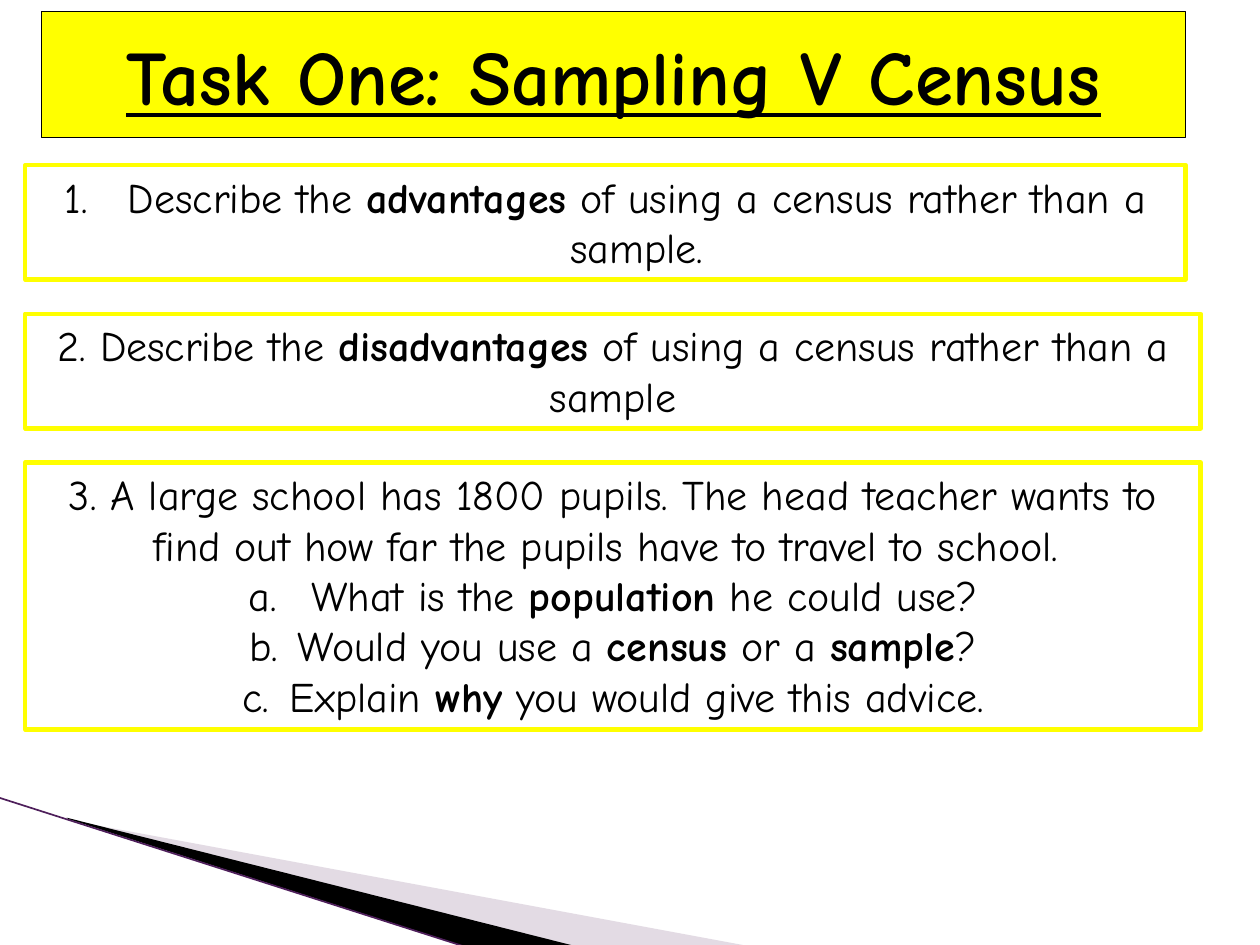
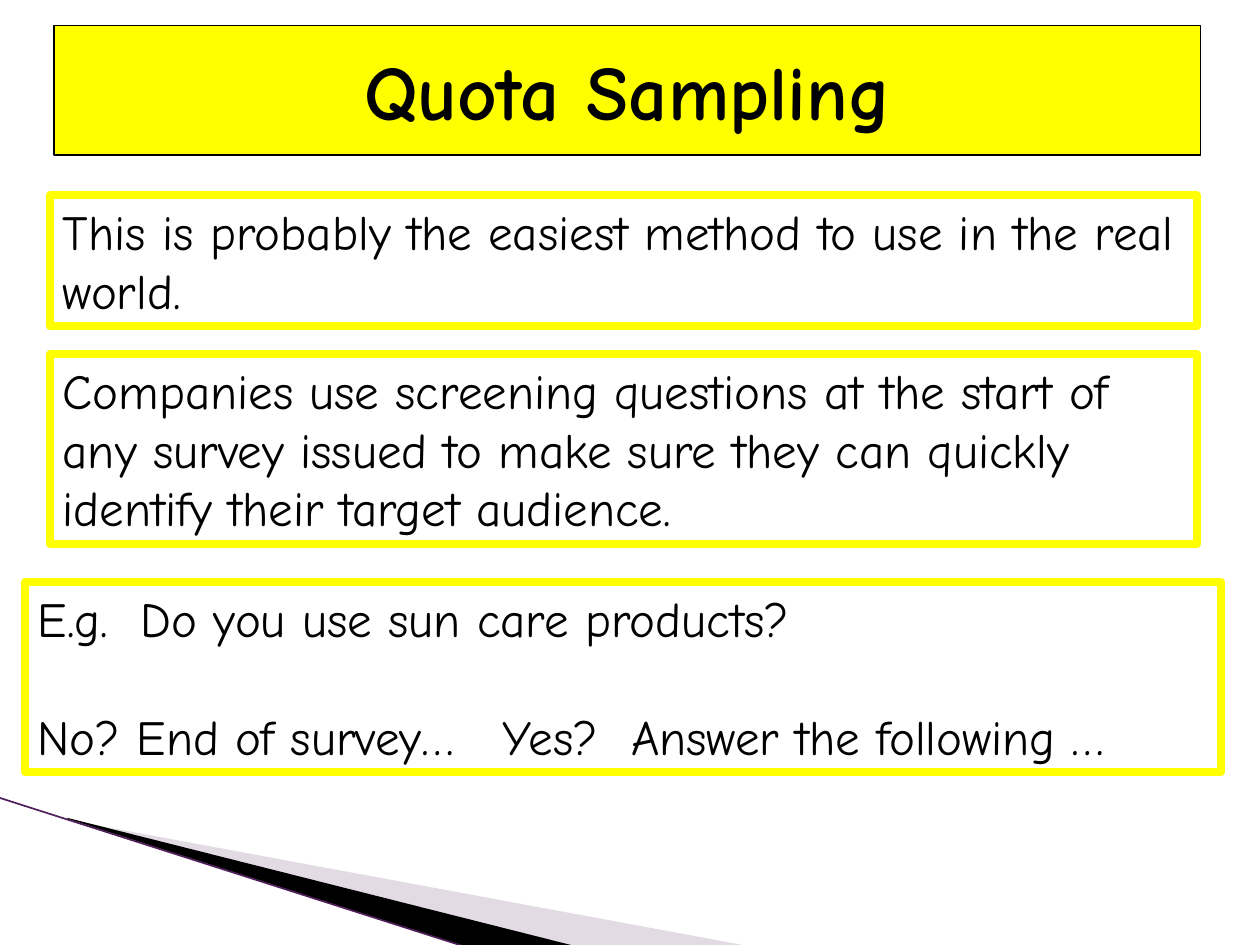
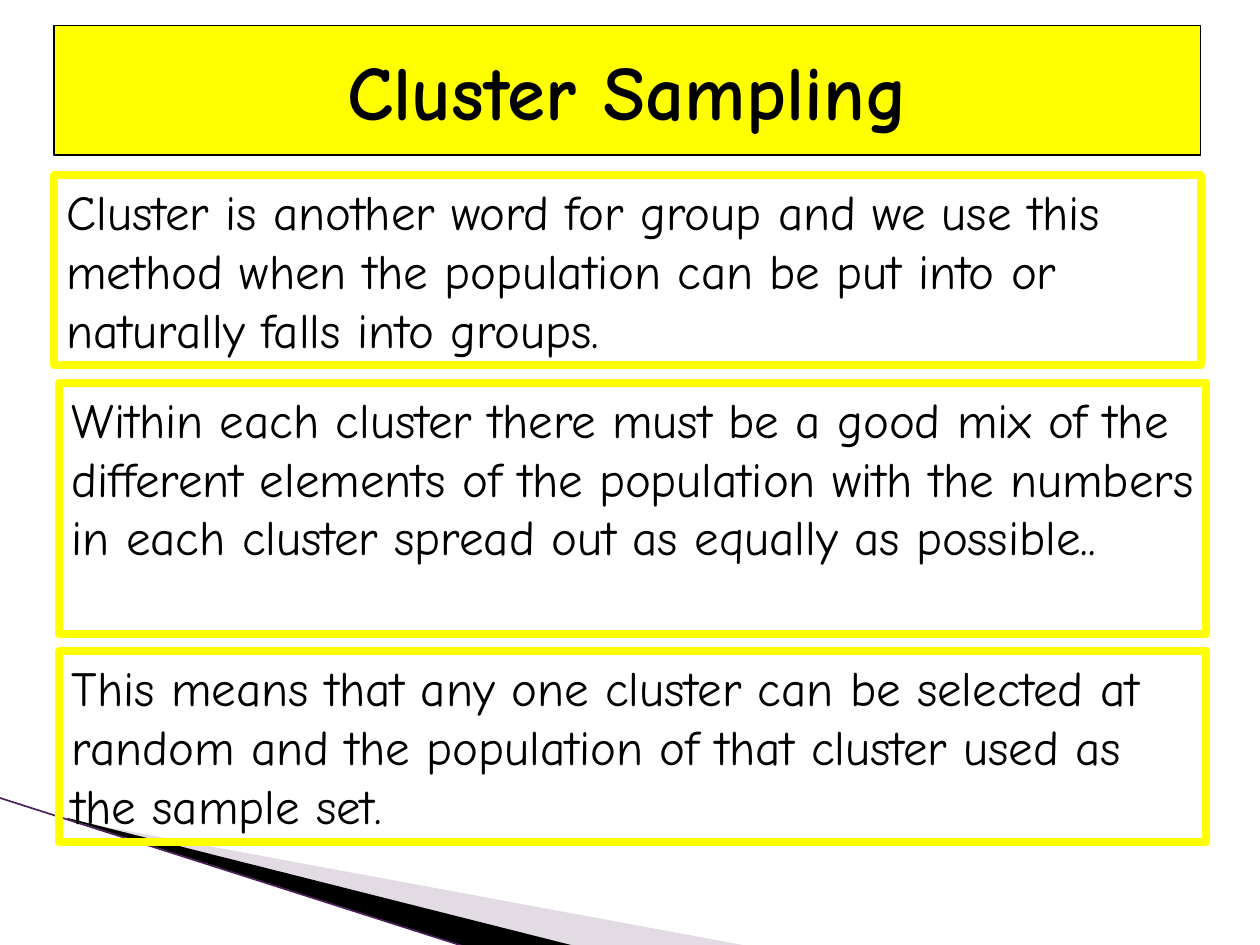
from dataclasses import dataclass

import pptx
import pptx.dml.color
import pptx.enum.shapes
import pptx.enum.text
import pptx.util
from lxml import etree
from pptx.oxml.ns import qn


@dataclass(frozen=True)
class Theme:
    font: str = "Comic Neue"
    ink: str = "000000"
    highlight: str = "FFFF00"
    mist: str = "B9A5BC"
    edge: str = "4E1F5B"
    title_size: float = 44
    task_size: float = 24
    note_size: float = 28
    title_border: float = 0.75
    task_border: float = 2.5
    note_border: float = 4.5
    edge_width: float = 0.95
    skipped_line: float = 34


theme = Theme()
Align = pptx.enum.text.PP_ALIGN
Anchor = pptx.enum.text.MSO_ANCHOR
rgb = pptx.dml.color.RGBColor.from_string

deck = pptx.Presentation()
deck.slide_width = pptx.util.Inches(10)
deck.slide_height = pptx.util.Inches(7.5)
cell = deck.slide_width // 1000


def write(paragraph, text, size, align=Align.LEFT, bold=False, underline=None,
          number=None, indent=0, tabs=(), before=0):
    paragraph.alignment = align
    properties = paragraph._p.get_or_add_pPr()
    if before:
        paragraph.space_before = pptx.util.Pt(before)
    if number:
        properties.set("marL", str(indent * cell))
        properties.set("indent", str(-indent * cell))
        etree.SubElement(properties, qn("a:buFont"), typeface="+mj-lt")
        etree.SubElement(properties, qn("a:buAutoNum"), type=number)
    if tabs:
        stops = etree.SubElement(properties, qn("a:tabLst"))
        for stop in tabs:
            etree.SubElement(stops, qn("a:tab"), pos=str(stop * cell), algn="l")
    for position, words in enumerate(text.split("*")):
        run = paragraph.add_run()
        run.text = words
        run.font.name = theme.font
        run.font.size = pptx.util.Pt(size)
        run.font.color.rgb = rgb(theme.ink)
        run.font.bold = bold or position % 2 == 1
        run.font.underline = underline


def panel(slide, place, border, border_color, fill=None):
    shape = slide.shapes.add_shape(
        pptx.enum.shapes.MSO_SHAPE.RECTANGLE, *(length * cell for length in place))
    shape.shadow.inherit = False
    if fill:
        shape.fill.solid()
        shape.fill.fore_color.rgb = rgb(fill)
    else:
        shape.fill.background()
    shape.line.color.rgb = rgb(border_color)
    shape.line.width = pptx.util.Pt(border)
    frame = shape.text_frame
    frame.word_wrap = True
    frame.vertical_anchor = Anchor.MIDDLE if fill else Anchor.TOP
    if not fill:
        frame.auto_size = pptx.enum.text.MSO_AUTO_SIZE.SHAPE_TO_FIT_TEXT
    return frame


wedges = [
    (theme.mist, 40, [(55, 651), (595, 751), (456, 751), (55, 650)]),
    (theme.ink, 100, [(53, 649), (457, 751), (372, 752), (54, 650)]),
]

task_title = (33, 9, 908, 100)
method_title = (43, 20, 910, 103)
task_style = dict(size=theme.task_size, align=Align.CENTER)
note_style = dict(size=theme.note_size)
letters = dict(number="alphaLcPeriod")

lessons = [
    ("Task One: Sampling V Census", task_title, True, theme.task_border, task_style, [
        ((20, 131, 921, 91), [
            ("Describe the *advantages* of using a census rather than a sample.",
             dict(number="arabicPeriod", indent=50))]),
        ((20, 249, 933, 91), [
            ("2. Describe the *disadvantages* of using a census rather than a sample", {})]),
        ((20, 367, 933, 212), [
            ("3. A large school has 1800 pupils. The head teacher wants to find out "
             "how far the pupils have to travel to school. ", {}),
            ("What is the *population* he could use?", dict(letters, indent=50)),
            ("Would you use a *census* or a *sample*?", dict(letters, indent=38)),
            ("Explain *why* you would give this advice.", dict(letters, indent=38))]),
    ]),
    ("Quota Sampling", method_title, None, theme.note_border, note_style, [
        ((40, 155, 910, 104), [
            ("This is probably the easiest method to use in the real world.", {})]),
        ((40, 281, 910, 151), [
            ("Companies use screening questions at the start of any survey issued to "
             "make sure they can quickly identify their target audience.", {})]),
        ((20, 462, 949, 151), [
            ("E.g.\tDo you use sun care products?", dict(tabs=[82])),
            ("No? End of survey…\tYes?\tAnswer the following …",
             dict(tabs=[369, 471], before=theme.skipped_line))]),
    ]),
    ("Cluster Sampling", method_title, None, theme.note_border, note_style, [
        ((43, 139, 910, 151), [
            ("Cluster is another word for group and we use this method when the "
             "population can be put into or naturally falls into groups.", {})]),
        ((47, 304, 910, 199), [
            ("Within each cluster there must be a good mix of the different elements "
             "of the population with the numbers in each cluster spread out as "
             "equally as possible..", {})]),
        ((47, 517, 910, 151), [
            ("This means that any one cluster can be selected at random and the "
             "population of that cluster used as the sample set.", {})]),
    ]),
]

for title, title_place, underline, border, style, notes in lessons:
    slide = deck.slides.add_slide(deck.slide_layouts[6])

    for color, opacity, corners in wedges:
        outline = slide.shapes.build_freeform(*corners[0], scale=cell)
        outline.add_line_segments(corners[1:], close=True)
        wedge = outline.convert_to_shape()
        wedge.shadow.inherit = False
        wedge.fill.solid()
        wedge.fill.fore_color.rgb = rgb(color)
        wedge.line.fill.background()
        tint = wedge._element.spPr.find(qn("a:solidFill"))[0]
        etree.SubElement(tint, qn("a:alpha"), val=str(opacity * 1000))

    edge = slide.shapes.add_connector(
        pptx.enum.shapes.MSO_CONNECTOR.STRAIGHT,
        -cell, 633 * cell, 371 * cell, 752 * cell)
    edge.line.color.rgb = rgb(theme.edge)
    edge.line.width = pptx.util.Pt(theme.edge_width)
    etree.SubElement(edge._element.spPr, qn("a:effectLst"))

    heading = panel(slide, title_place, theme.title_border, theme.ink, theme.highlight)
    write(heading.paragraphs[0], title, theme.title_size,
          align=Align.CENTER, bold=True, underline=underline)

    for place, lines in notes:
        note = panel(slide, place, border, theme.highlight)
        for position, (text, layout) in enumerate(lines):
            paragraph = note.add_paragraph() if position else note.paragraphs[0]
            write(paragraph, text, **style, **layout)

deck.save("out.pptx")
